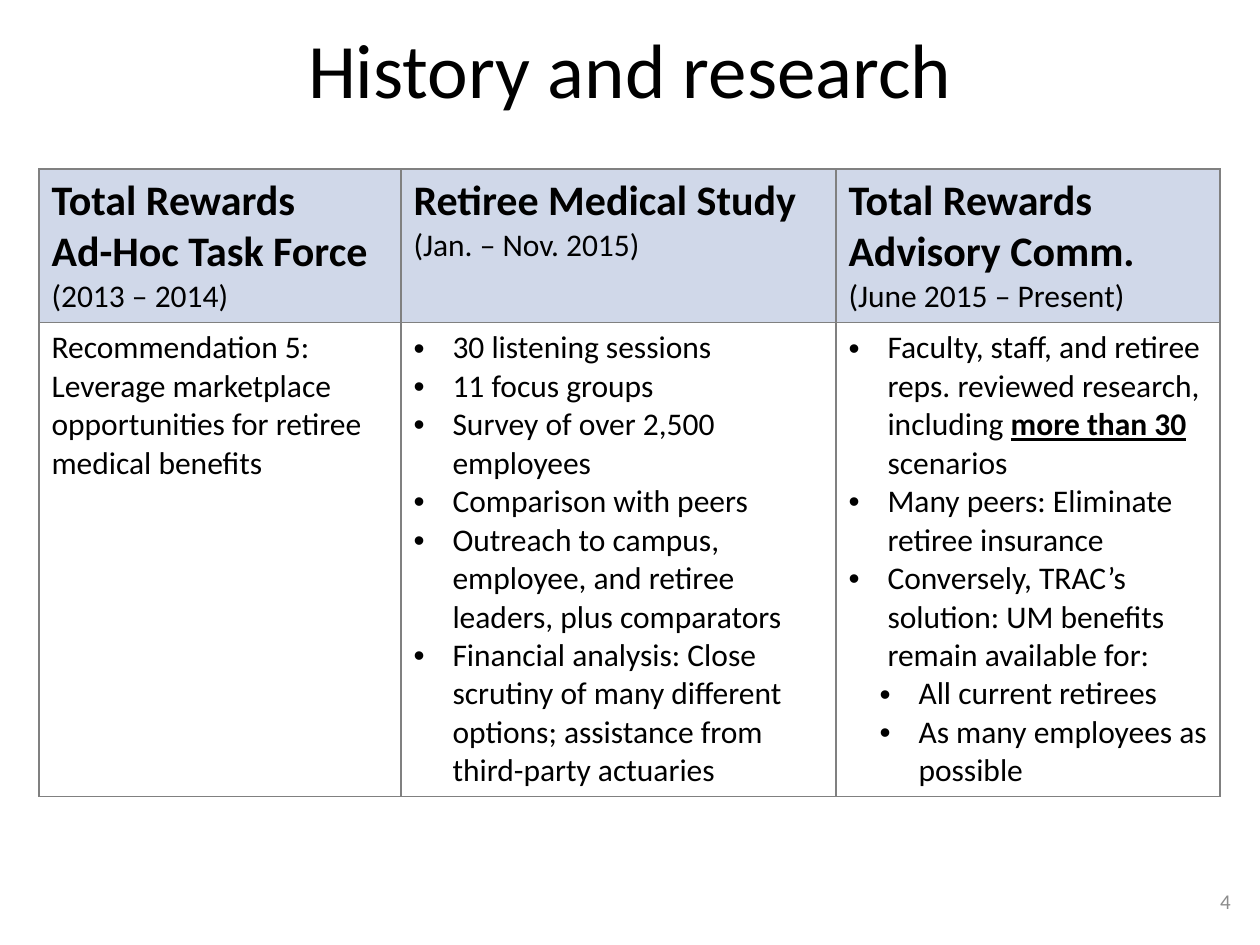
import pptx
import pptx.dml.color
import pptx.enum.text
import pptx.oxml
import pptx.oxml.ns
import pptx.util

COLORS = {"text": "000000", "header": "D0D8E9", "border": "808080", "number": "8C8C8C"}
FONT = "Calibri"
ALIGN = pptx.enum.text.PP_ALIGN
MIDDLE = pptx.enum.text.MSO_ANCHOR.MIDDLE
INDENT = 39  # hanging indent of a bullet
LEVEL_STEP = 31  # extra indent of a second-level bullet


def px(length):
    return pptx.util.Emu(round(length * 914400 / 126))


def rgb(name):
    return pptx.dml.color.RGBColor.from_string(COLORS[name])


class SlideBuilder:
    def __init__(self, deck):
        self.page = deck.slides.add_slide(deck.slide_layouts[5])

    def place(self, box, left, top, width, height):
        box.left, box.top, box.width, box.height = map(px, (left, top, width, height))

    def span(self, para, text, size=18, color="text", bold=False, underline=False):
        run = para.add_run()
        run.text = text
        font = run.font
        font.name, font.size = FONT, pptx.util.Pt(size)
        font.bold, font.underline = bold, underline
        font.color.rgb = rgb(color)

    def title(self, text, area):
        box = self.page.shapes.title
        self.place(box, *area)
        box.text_frame.vertical_anchor = MIDDLE
        para = box.text_frame.paragraphs[0]
        para.alignment = ALIGN.CENTER
        self.span(para, text, size=44)

    def label(self, text, area, size, color):
        box = self.page.shapes.add_textbox(0, 0, 0, 0)
        self.place(box, *area)
        box.text_frame.word_wrap = True
        box.text_frame.vertical_anchor = MIDDLE
        para = box.text_frame.paragraphs[0]
        para.alignment = ALIGN.RIGHT
        self.span(para, text, size, color)

    def bullet(self, para, level):
        para.level = level
        properties = para._p.get_or_add_pPr()
        properties.set("marL", str(px(INDENT + level * LEVEL_STEP)))
        properties.set("indent", str(px(-INDENT)))
        namespace = pptx.oxml.ns.nsdecls("a")
        for xml in (f'<a:buFont {namespace} typeface="Arial"/>',
                    f'<a:buChar {namespace} char="•"/>'):
            properties.append(pptx.oxml.parse_xml(xml))

    def borders(self, cell):
        properties = cell._tc.get_or_add_tcPr()
        for side in "LRTB":
            properties.append(pptx.oxml.parse_xml(
                f'<a:ln{side} {pptx.oxml.ns.nsdecls("a")} w="12700"><a:solidFill>'
                f'<a:srgbClr val="{COLORS["border"]}"/></a:solidFill></a:ln{side}>'))

    def fill_cell(self, cell, lines):
        """Each line is a bullet level (None for plain text) and its runs."""
        frame = cell.text_frame
        for index, (level, runs) in enumerate(lines):
            para = frame.add_paragraph() if index else frame.paragraphs[0]
            if level is not None:
                self.bullet(para, level)
            for text, style in runs:
                self.span(para, text, **style)

    def table(self, left, top, widths, heights, rows):
        frame = self.page.shapes.add_table(
            len(heights), len(widths), px(left), px(top), px(sum(widths)), px(sum(heights)))
        grid = frame.table
        grid.horz_banding = False
        for column, width in zip(grid.columns, widths):
            column.width = px(width)
        for row, height, contents in zip(grid.rows, heights, rows):
            row.height = px(height)
            for cell, lines in zip(row.cells, contents):
                self.fill_cell(cell, lines)
                self.borders(cell)
                if contents is rows[0]:
                    cell.fill.solid()
                    cell.fill.fore_color.rgb = rgb("header")
                else:
                    cell.fill.background()


def plain(text, level=None, **style):
    return level, [(text, style)]


def heading(names, dates):
    return [plain(name, size=24, bold=True) for name in names] + [plain(dates)]


def main():
    deck = pptx.Presentation()
    deck.slide_width, deck.slide_height = px(1260), px(945)
    builder = SlideBuilder(deck)

    builder.title("History and research", (63, -11, 1134, 158))

    # Column headings
    headings = [
        heading(["Total Rewards", "Ad-Hoc Task Force"], "(2013 – 2014)"),
        heading(["Retiree Medical Study"], "(Jan. – Nov. 2015)"),
        heading(["Total Rewards Advisory Comm."], "(June 2015 – Present)"),
    ]

    # Column contents
    task_force = [
        plain("Recommendation 5:"),
        plain("Leverage marketplace opportunities for retiree medical benefits"),
    ]
    study = [plain(text, 0) for text in (
        "30 listening sessions",
        "11 focus groups",
        "Survey of over 2,500 employees",
        "Comparison with peers",
        "Outreach to campus, employee, and retiree leaders, plus comparators",
        "Financial analysis: Close scrutiny of many different options; "
        "assistance from third-party actuaries",
    )]
    committee = [
        (0, [("Faculty, staff, and retiree reps. reviewed research, including ", {}),
             ("more than 30 ", {"bold": True, "underline": True}),
             ("scenarios", {})]),
        plain("Many peers: Eliminate retiree insurance", 0),
        plain("Conversely, TRAC’s solution: UM benefits remain available for:", 0),
        plain("All current retirees", 1),
        plain("As many employees as possible", 1),
    ]
    builder.table(39, 169, (362, 435, 384), (153, 474),
                  [headings, [task_force, study, committee]])

    # Page number
    builder.label("4", (949, 876, 294, 50), size=12, color="number")

    deck.save("out.pptx")


if __name__ == "__main__":
    main()
